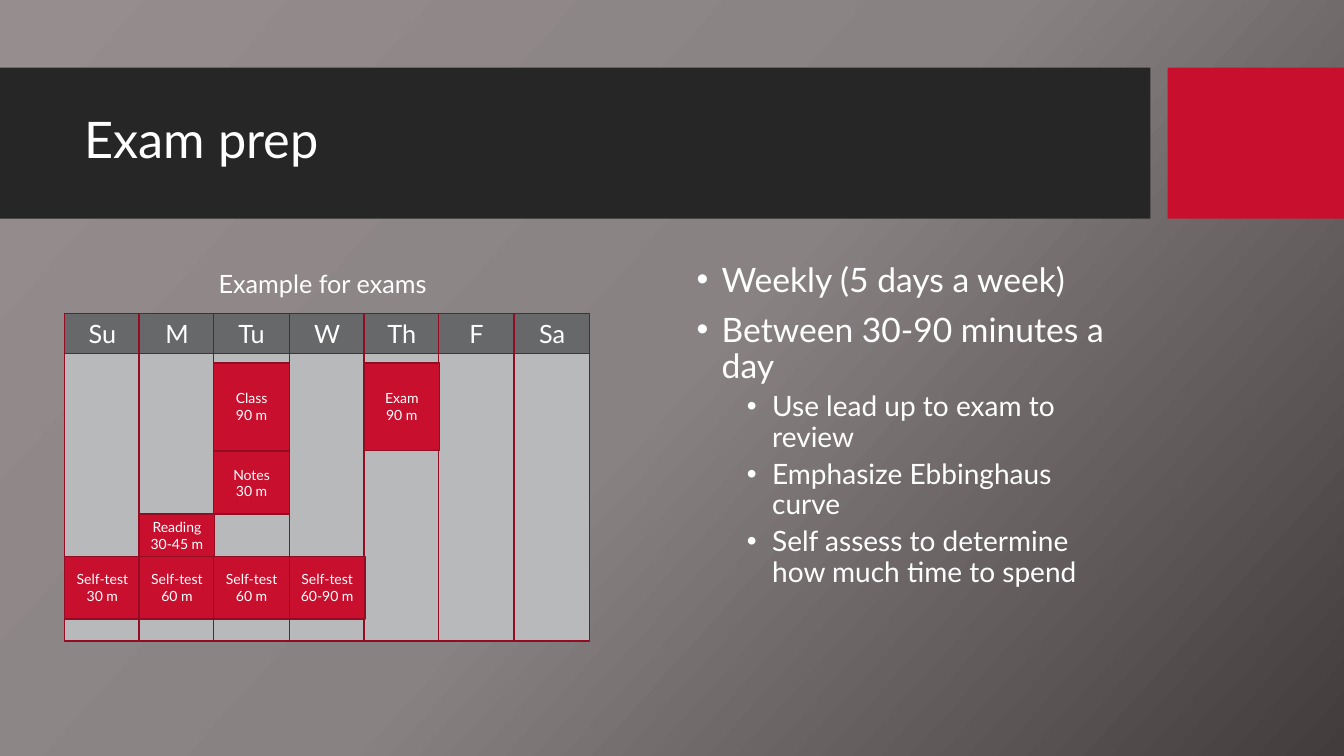
from copy import deepcopy

from lxml.etree import SubElement
from pptx import Presentation
from pptx.dml.color import RGBColor
from pptx.enum.shapes import MSO_SHAPE
from pptx.enum.text import MSO_ANCHOR, PP_ALIGN
from pptx.oxml.ns import qn
from pptx.util import Pt

PX = 9144
FONT = "Lato"
WHITE = RGBColor(0xFF, 0xFF, 0xFF)
BLACK = RGBColor(0x26, 0x26, 0x26)
RED = RGBColor(0xC8, 0x10, 0x2E)
GRAY = RGBColor(0x66, 0x68, 0x6A)
SILVER = RGBColor(0xB8, 0xB9, 0xBB)
EDGE = RGBColor(0x94, 0x0C, 0x22)
BACK = [
    (0, RGBColor(0x96, 0x8E, 0x8E)),
    (0.5, RGBColor(0x89, 0x82, 0x82)),
    (1, RGBColor(0x43, 0x3C, 0x3C)),
]

LEFT, SPAN, WIDE = 64, 446, 75
DAYS = ["Su", "M", "Tu", "W", "Th", "F", "Sa"]
TASKS = [
    (1, 510, 42, ["Reading 30-45 m"]),
    (2, 360, 87, ["Class", "90 m"]),
    (4, 360, 87, ["Exam", "90 m"]),
    (2, 448, 62, ["Notes", "30 m"]),
]
TESTS = ["30 m", "60 m", "60 m", "60-90 m"]
POINTS = [
    (0, "Weekly (5 days a week)"),
    (0, "Between 30-90 minutes a day"),
    (1, "Use lead up to exam to review"),
    (1, "Emphasize Ebbinghaus curve"),
    (1, "Self assess to determine how much time to spend"),
]


def emu(*sizes):
    return [size * PX for size in sizes]


def paint_back(slide):
    fill = slide.background.fill
    fill.gradient()
    fill.gradient_angle = 318
    stops = slide.element.find(".//" + qn("a:gsLst"))
    stops.insert(1, deepcopy(stops[0]))
    for stop, (place, color) in zip(fill.gradient_stops, BACK):
        stop.position = place
        stop.color.rgb = color


def add_run(para, text, size):
    run = para.add_run()
    run.text = text
    run.font.name = FONT
    run.font.size = Pt(size)
    run.font.color.rgb = WHITE


def add_box(slide, area, color, edge=None, lines=(), size=10):
    box = slide.shapes.add_shape(MSO_SHAPE.RECTANGLE, *emu(*area))
    box.shadow.inherit = False
    box.fill.solid()
    box.fill.fore_color.rgb = color
    if edge is None:
        box.line.fill.background()
    else:
        box.line.color.rgb = edge
        box.line.width = Pt(1)
    frame = box.text_frame
    frame.word_wrap = True
    frame.vertical_anchor = MSO_ANCHOR.MIDDLE
    for i, line in enumerate(lines):
        para = frame.add_paragraph() if i else frame.paragraphs[0]
        para.alignment = PP_ALIGN.CENTER
        add_run(para, line, size)


def add_label(slide, area, text, size, wrap=True):
    frame = slide.shapes.add_textbox(*emu(*area)).text_frame
    frame.word_wrap = wrap
    frame.vertical_anchor = MSO_ANCHOR.MIDDLE
    para = frame.paragraphs[0]
    para.line_spacing = 0.9 if wrap else 1.0
    add_run(para, text, size)


def add_list(slide, area, points):
    frame = slide.shapes.add_textbox(*emu(*area)).text_frame
    frame.word_wrap = True
    for i, (level, text) in enumerate(points):
        para = frame.add_paragraph() if i else frame.paragraphs[0]
        props = para._p.get_or_add_pPr()
        props.set("marL", str((25 + 50 * level) * PX))
        props.set("indent", str(-25 * PX))
        SubElement(props, qn("a:buFont")).set("typeface", "Arial")
        SubElement(props, qn("a:buChar")).set("char", "•")
        para.level = level
        para.line_spacing = 0.9
        if i:
            para.space_before = Pt(5 if level else 10)
        add_run(para, text, 20 if level else 24)


def day_left(day):
    return LEFT + SPAN * day // 6


def add_week(slide):
    for day in range(len(DAYS)):
        add_box(slide, (day_left(day), 350, WIDE, 286), SILVER, EDGE)
    for day, name in enumerate(DAYS):
        add_box(slide, (day_left(day), 311, WIDE, 40), GRAY, EDGE, [name], 18)
    tests = [(day, 552, 62, ["Self-test", time]) for day, time in enumerate(TESTS)]
    for day, top, high, lines in TASKS + tests:
        add_box(slide, (day_left(day), top, WIDE, high), RED, EDGE, lines)


def main():
    deck = Presentation()
    deck.slide_width, deck.slide_height = emu(1333, 750)
    slide = deck.slides.add_slide(deck.slide_layouts[6])
    paint_back(slide)
    add_box(slide, (0, 67, 1141, 150), BLACK)
    add_box(slide, (1158, 67, 175, 150), RED)
    add_label(slide, (74, 82, 1051, 118), "Exam prep", 36)
    add_list(slide, (681, 256, 445, 394), POINTS)
    add_week(slide)
    add_label(slide, (207, 261, 235, 40), "Example for exams", 18, False)
    deck.save("out.pptx")


if __name__ == "__main__":
    main()
